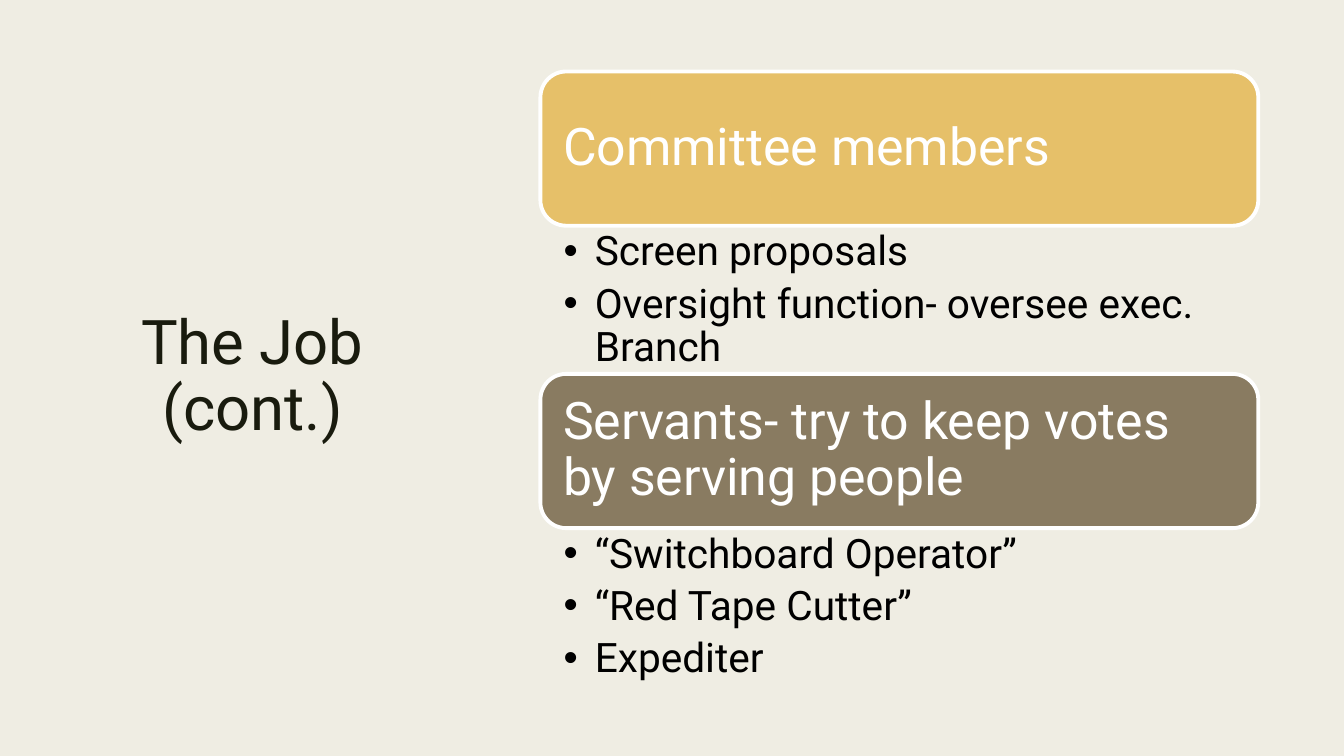
from lxml.etree import SubElement
from pptx import Presentation
from pptx.dml.color import RGBColor
from pptx.enum.shapes import MSO_SHAPE
from pptx.enum.text import MSO_ANCHOR, PP_ALIGN
from pptx.oxml.ns import qn
from pptx.util import Inches, Pt

CREAM = RGBColor(0xEF, 0xED, 0xE3)
INK = RGBColor(0x19, 0x1B, 0x0E)
GOLD = RGBColor(0xE6, 0xC0, 0x69)
BROWN = RGBColor(0x89, 0x7B, 0x61)
WHITE = RGBColor(0xFF, 0xFF, 0xFF)
BLACK = RGBColor(0, 0, 0)
FONT = "Roboto"

SLIDE_WIDTH, SLIDE_HEIGHT = 13.33, 7.5
BANNER_HEIGHT = 1.53
SECTION_PITCH = 3.0
SECTIONS = [
    ("Committee members", GOLD,
     ["Screen proposals", "Oversight function- oversee exec. Branch"]),
    ("Servants- try to keep votes by serving people", BROWN,
     ["“Switchboard Operator”", "“Red Tape Cutter”", "Expediter"]),
]


def style_text(frame, size, color, align, spacing, anchor, insets):
    """Format every paragraph of a frame; insets are left, top, right, bottom."""
    frame.word_wrap = True
    frame.vertical_anchor = anchor
    (frame.margin_left, frame.margin_top,
     frame.margin_right, frame.margin_bottom) = map(Inches, insets)
    for paragraph in frame.paragraphs:
        paragraph.alignment = align
        paragraph.line_spacing = spacing
        for run in paragraph.runs:
            run.font.name = FONT
            run.font.size = Pt(size)
            run.font.color.rgb = color


def add_bullet(paragraph):
    properties = paragraph._p.get_or_add_pPr()
    properties.set("marL", str(Inches(0.31)))
    properties.set("indent", str(-Inches(0.31)))
    SubElement(properties, qn("a:buFont"), typeface="Arial")
    SubElement(properties, qn("a:buChar"), char="•")


def add_panel(slide, shape_type, left, top, width, height, color):
    panel = slide.shapes.add_shape(
        shape_type, Inches(left), Inches(top), Inches(width), Inches(height))
    panel.shadow.inherit = False
    panel.fill.solid()
    panel.fill.fore_color.rgb = color
    return panel


def add_backdrop(slide):
    slide.background.fill.solid()
    slide.background.fill.fore_color.rgb = CREAM
    backdrop = add_panel(slide, MSO_SHAPE.RECTANGLE,
                         0, 0, SLIDE_WIDTH, SLIDE_HEIGHT, CREAM)
    backdrop.line.fill.background()
    # Send it behind the title
    slide.shapes.title._element.addprevious(backdrop._element)


def place_title(slide, left, top, width, height):
    title = slide.shapes.title
    title.left, title.top, title.width, title.height = map(
        Inches, (left, top, width, height))
    title.text_frame.text = "The Job (cont.)"
    style_text(title.text_frame, 44, INK, PP_ALIGN.CENTER, 0.89,
               MSO_ANCHOR.MIDDLE, (0.1, 0.05, 0.1, 0.05))


def add_section(slide, left, top, width, heading, color, points):
    # Banner with the heading
    banner = add_panel(slide, MSO_SHAPE.ROUNDED_RECTANGLE,
                       left, top, width, BANNER_HEIGHT, color)
    banner.line.color.rgb = WHITE
    banner.line.width = Pt(2.75)
    banner.text_frame.text = heading
    style_text(banner.text_frame, 37, WHITE, PP_ALIGN.LEFT, 0.9,
               MSO_ANCHOR.MIDDLE, (0.15, 0.15, 0.15, 0.15))

    # Bulleted points below it
    details = slide.shapes.add_textbox(
        Inches(left), Inches(top + BANNER_HEIGHT),
        Inches(width), Inches(SECTION_PITCH - BANNER_HEIGHT)).text_frame
    details.text = "\n".join(points)
    style_text(details, 29, BLACK, PP_ALIGN.LEFT, 0.9,
               MSO_ANCHOR.TOP, (0.23, 0.05, 0.29, 0.05))
    for paragraph in details.paragraphs:
        paragraph.space_after = Pt(6)
        add_bullet(paragraph)


def build_job_slide(presentation):
    slide = presentation.slides.add_slide(presentation.slide_layouts[5])
    add_backdrop(slide)
    place_title(slide, 0.7, 0.7, 3.61, 6.1)
    for index, section in enumerate(SECTIONS):
        add_section(slide, 5.36, 0.71 + index * SECTION_PITCH, 7.12, *section)


def main():
    presentation = Presentation()
    presentation.slide_width = Inches(SLIDE_WIDTH)
    presentation.slide_height = Inches(SLIDE_HEIGHT)
    build_job_slide(presentation)
    presentation.save("out.pptx")


if __name__ == "__main__":
    main()
